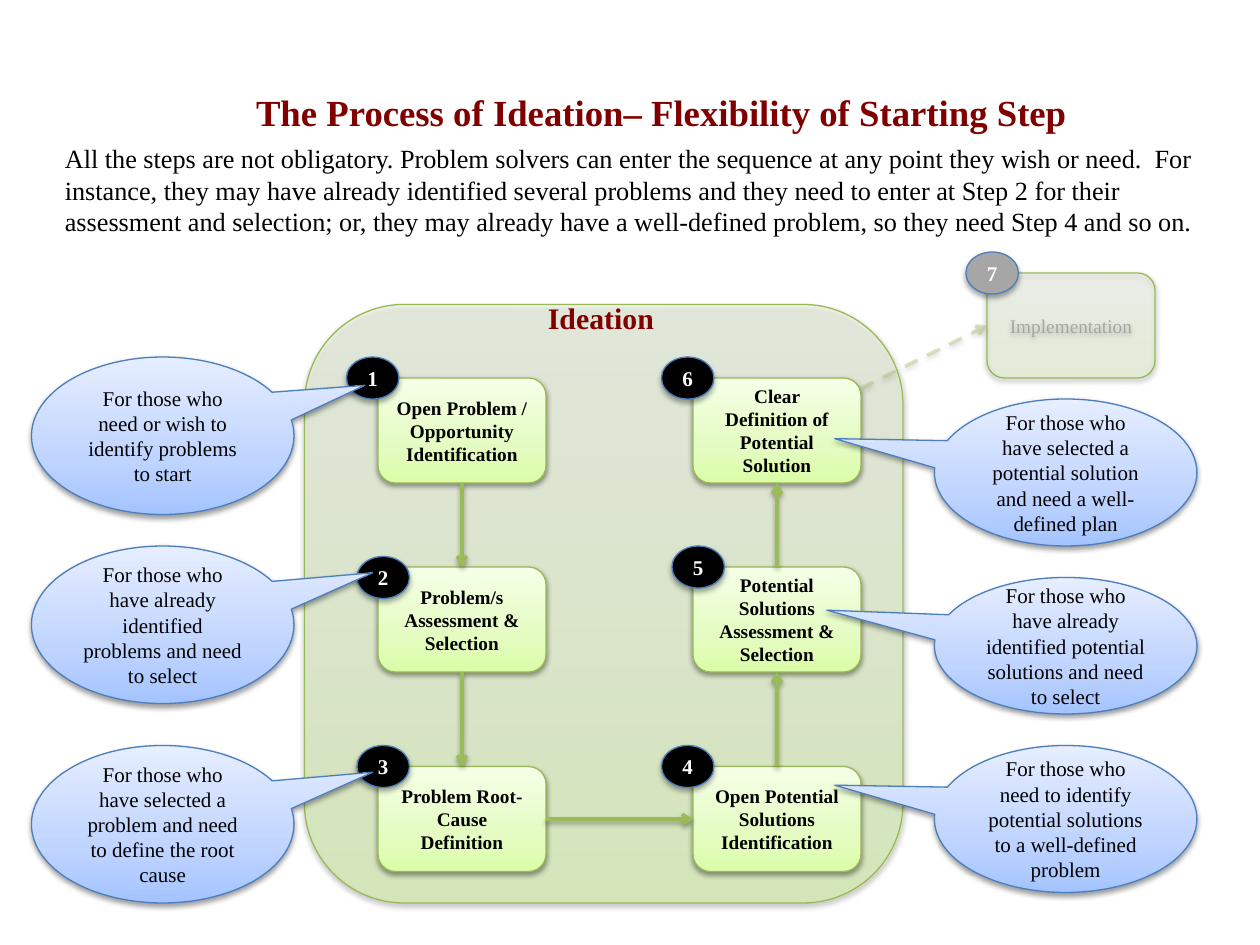
from typing import NamedTuple, Optional

from lxml.etree import SubElement
from pptx import Presentation
from pptx.dml.color import RGBColor
from pptx.enum.dml import MSO_LINE
from pptx.enum.shapes import MSO_CONNECTOR, MSO_SHAPE
from pptx.enum.text import MSO_ANCHOR, MSO_AUTO_SIZE, PP_ALIGN
from pptx.oxml.ns import qn
from pptx.util import Cm, Pt

FONT = "Times New Roman"
COLORS = {
    "black": "000000", "white": "FFFFFF", "maroon": "800000", "gray": "A6A6A6",
    "green_edge": "98B955", "arrow": "9BBB59", "blue_edge": "4B7EBC",
}
# Gradient stops (percent, colour), running from bottom to top
GREEN = ((0, "DAFDA7"), (35, "E4FCC2"), (100, "F5FFE7"))
BLUE = ((0, "A4C4FF"), (35, "BFD4FF"), (100, "E6EEFF"))
BOTTOM, LEFT, TOP, RIGHT = 2, 1, 0, 3

# Everything sits on a grid of twelve cells to the inch
BOX_SIZE = (16, 10)
BADGE_SIZE = (5, 4)
CALLOUT_WIDTH = 25
BOX_LEFT, BOX_RIGHT = 36, 66
ROWS = (36, 54, 73)
CALLOUT_LEFT, CALLOUT_RIGHT = 3, 89


class Step(NamedTuple):
    text: str
    left: int
    top: int
    badge_left: int
    badge_top: int


class Callout(NamedTuple):
    text: str
    left: int
    top: int
    height: int
    tip: tuple


class Arrow(NamedTuple):
    start: int
    start_side: int
    end: int
    end_side: int


STEPS = [
    Step("Open Problem / Opportunity Identification", BOX_LEFT, ROWS[0], 33, 34),
    Step("Problem/s Assessment & Selection", BOX_LEFT, ROWS[1], 34, 53),
    Step("Problem Root-Cause Definition", BOX_LEFT, ROWS[2], 34, 71),
    Step("Open Potential Solutions Identification", BOX_RIGHT, ROWS[2], 63, 71),
    Step("Potential Solutions Assessment & Selection", BOX_RIGHT, ROWS[1], 64, 52),
    Step("Clear Definition of Potential Solution", BOX_RIGHT, ROWS[0], 63, 34),
]
IMPLEMENTATION = Step("Implementation", 94, 26, 92, 24)

ARROWS = [
    Arrow(0, BOTTOM, 1, TOP), Arrow(1, BOTTOM, 2, TOP), Arrow(2, RIGHT, 3, LEFT),
    Arrow(3, TOP, 4, BOTTOM), Arrow(4, TOP, 5, BOTTOM),
]

CALLOUTS = [
    Callout("For those who need or wish to identify problems to start",
            CALLOUT_LEFT, 34, 15, (0.77, -0.32)),
    Callout("For those who have already identified problems and need to select",
            CALLOUT_LEFT, 52, 15, (0.8, -0.33)),
    Callout("For those who have selected a problem and need to define the root cause",
            CALLOUT_LEFT, 71, 15, (0.8, -0.33)),
    Callout("For those who need to identify potential solutions to a well-defined problem",
            CALLOUT_RIGHT, 71, 14, (-0.88, -0.23)),
    Callout("For those who have already identified potential solutions and need to select",
            CALLOUT_RIGHT, 55, 13, (-0.91, -0.26)),
    Callout("For those who have selected a potential solution and need a well-defined plan",
            CALLOUT_RIGHT, 38, 14, (-0.88, -0.23)),
]


def grid(cells: float) -> Cm:
    return Cm(cells * 2.54 / 12)


def rgb(name: str) -> RGBColor:
    return RGBColor.from_string(COLORS[name])


def add_alpha(color, percent: float) -> None:
    SubElement(color, qn("a:alpha"), val=str(int(percent * 1000)))


def add_shadow(effects, alpha: int = 38, distance: float = 1.6) -> None:
    shadow = SubElement(effects, qn("a:outerShdw"), blurRad=str(Pt(3.1)),
                        dist=str(Pt(distance)), dir="5400000", rotWithShape="0")
    add_alpha(SubElement(shadow, qn("a:srgbClr"), val=COLORS["black"]), alpha)


def set_gradient(shape, stops: tuple, opacity: int = 100) -> None:
    shape.fill.gradient()
    shape.fill.gradient_angle = 90
    stop_list = shape._element.spPr.find(qn("a:gradFill")).find(qn("a:gsLst"))
    for stop in list(stop_list):
        stop_list.remove(stop)
    for position, color in stops:
        stop = SubElement(stop_list, qn("a:gs"), pos=str(position * 1000))
        fill = SubElement(stop, qn("a:srgbClr"), val=color)
        if opacity < 100:
            add_alpha(fill, opacity)


def write(shape, text: str, *, size: float, color: str = "black", bold: bool = False,
          align: Optional[PP_ALIGN] = PP_ALIGN.CENTER, wrap: bool = True) -> None:
    shape.text_frame.word_wrap = wrap
    paragraph = shape.text_frame.paragraphs[0]
    paragraph.alignment = align
    run = paragraph.add_run()
    run.text = text
    run.font.name = FONT
    run.font.size = Pt(size)
    run.font.bold = bold
    run.font.color.rgb = rgb(color)


def add_shape(slide, kind: MSO_SHAPE, left: float, top: float, width: float,
              height: float, edge: str, alpha: int = 38, distance: float = 1.6):
    shape = slide.shapes.add_shape(kind, grid(left), grid(top), grid(width), grid(height))
    shape.line.color.rgb = rgb(edge)
    shape.line.width = Pt(0.75)
    shape.shadow.inherit = False
    add_shadow(shape._element.spPr.find(qn("a:effectLst")), alpha, distance)
    shape.text_frame.vertical_anchor = MSO_ANCHOR.MIDDLE
    return shape


def add_box(slide, step: Step, opacity: int = 100, color: str = "black", bold: bool = True):
    box = add_shape(slide, MSO_SHAPE.ROUNDED_RECTANGLE, step.left, step.top,
                    *BOX_SIZE, "green_edge")
    set_gradient(box, GREEN, opacity)
    write(box, step.text, size=11, color=color, bold=bold)
    return box


def add_badge(slide, step: Step, number: int, color: str = "black") -> None:
    badge = add_shape(slide, MSO_SHAPE.OVAL, step.badge_left, step.badge_top,
                      *BADGE_SIZE, "blue_edge", alpha=35, distance=1.8)
    badge.fill.solid()
    badge.fill.fore_color.rgb = rgb(color)
    write(badge, str(number), size=12, color="white", bold=True)


def add_callout(slide, callout: Callout) -> None:
    shape = add_shape(slide, MSO_SHAPE.OVAL_CALLOUT, callout.left, callout.top,
                      CALLOUT_WIDTH, callout.height, "blue_edge")
    shape.adjustments[0], shape.adjustments[1] = callout.tip
    set_gradient(shape, BLUE)
    write(shape, callout.text, size=12)


def add_arrow(slide, end_box, end_side: int, start_box=None, start_side: int = 0,
              start: tuple = (0, 0), opacity: int = 100):
    connector = slide.shapes.add_connector(
        MSO_CONNECTOR.STRAIGHT, grid(start[0]), grid(start[1]), 0, 0)
    if start_box is not None:
        connector.begin_connect(start_box, start_side)
    connector.end_connect(end_box, end_side)
    connector.line.width = Pt(2)
    connector.line.color.rgb = rgb("arrow")
    properties = connector._element.spPr
    if opacity < 100:
        connector.line.dash_style = MSO_LINE.DASH
        add_alpha(next(properties.iter(qn("a:srgbClr"))), opacity)
    SubElement(properties.find(qn("a:ln")), qn("a:tailEnd"), type="arrow")
    add_shadow(SubElement(properties, qn("a:effectLst")))


def add_label(slide, text: str, left: float, top: float, width: float, height: float,
              **text_format) -> None:
    label = slide.shapes.add_textbox(grid(left), grid(top), grid(width), grid(height))
    label.text_frame.auto_size = MSO_AUTO_SIZE.SHAPE_TO_FIT_TEXT
    write(label, text, **text_format)


def main() -> None:
    presentation = Presentation()
    presentation.slide_width, presentation.slide_height = Cm(25.4), Cm(19.05)
    slide = presentation.slides.add_slide(presentation.slide_layouts[6])

    # Ideation panel
    panel = add_shape(slide, MSO_SHAPE.ROUNDED_RECTANGLE, 29, 29, 57, 57, "green_edge")
    set_gradient(panel, GREEN, 50)

    # Steps, arrows and numbers
    boxes = [add_box(slide, step) for step in STEPS]
    for arrow in ARROWS:
        add_arrow(slide, boxes[arrow.end], arrow.end_side, boxes[arrow.start], arrow.start_side)
    for number, step in enumerate(STEPS, 1):
        add_badge(slide, step, number)

    # Faded follow-up step
    follow_up = add_box(slide, IMPLEMENTATION, opacity=25, color="gray", bold=False)
    add_arrow(slide, follow_up, LEFT, start=(82, 37), opacity=37)
    add_badge(slide, IMPLEMENTATION, len(STEPS) + 1, "gray")

    # Headings and introduction
    add_label(slide, "The Process of Ideation– Flexibility of Starting Step",
              15, 8, 96, 5.4, size=21, color="maroon", bold=True)
    add_label(slide, "Ideation", 51, 28, 12.6, 4.7,
              size=17, color="maroon", bold=True, align=None, wrap=False)
    add_label(slide, "All the steps are not obligatory. Problem solvers can enter the sequence "
              "at any point they wish or need.  For instance, they may have already identified "
              "several problems and they need to enter at Step 2 for their assessment and "
              "selection; or, they may already have a well-defined problem, so they need "
              "Step 4 and so on.", 5, 13, 110, 10.3, size=15, align=None)

    # Entry points
    for callout in CALLOUTS:
        add_callout(slide, callout)

    presentation.save("out.pptx")


if __name__ == "__main__":
    main()
